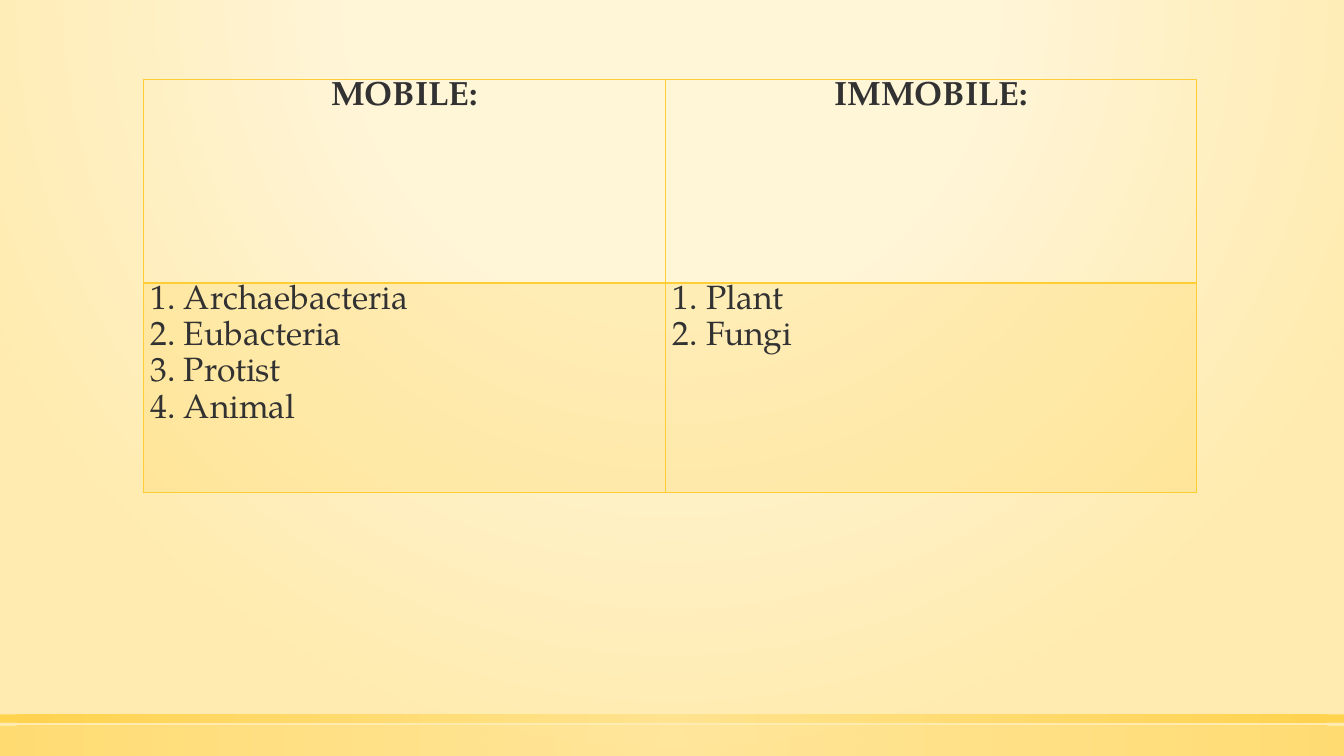
from pptx import Presentation
from pptx.dml.color import RGBColor
from pptx.enum.shapes import MSO_SHAPE
from pptx.enum.text import PP_ALIGN
from pptx.oxml import parse_xml
from pptx.oxml.ns import nsdecls, qn
from pptx.util import Cm, Pt

GOLD, PALE_GOLD, INK = "FFCD36", "FFE186", "323232"
FONT = "TeX Gyre Pagella"
WIDTH, HEIGHT = 33.87, 19.05
COLUMN_WIDTHS = (13.16, 13.39)
ROW_HEIGHTS = (5.13, 5.28)
MARGINS = {"margin_left": Cm(0.18), "margin_right": Cm(0.18),
           "margin_top": 0, "margin_bottom": 0}

KINGDOMS = {
    "MOBILE:": ["1. Archaebacteria", "2. Eubacteria", "3. Protist", "4. Animal"],
    "IMMOBILE:": ["1. Plant", "2. Fungi"],
}


def rgb(value):
    return RGBColor.from_string(value)


def set_attrs(obj, values):
    for name, value in values.items():
        setattr(obj, name, value)


def radial_fill(fill, element, stops, focus, alpha=100):
    """Fill with a circular gradient; focus is left, top, right, bottom in %."""
    fill.gradient()
    grad = element.find(".//" + qn("a:gradFill"))
    colors = "".join(
        f'<a:gs pos="{pos * 1000}"><a:srgbClr val="{color}">'
        f'<a:alpha val="{alpha * 1000}"/></a:srgbClr></a:gs>'
        for pos, color in stops)
    rect = " ".join(f'{side}="{v * 1000}"' for side, v in zip("ltrb", focus))
    grad.getparent().replace(grad, parse_xml(
        f'<a:gradFill {nsdecls("a")} rotWithShape="1"><a:gsLst>{colors}</a:gsLst>'
        f'<a:path path="circle"><a:fillToRect {rect}/></a:path></a:gradFill>'))


def add_band(s, top, height, alpha):
    sp = s.shapes.add_shape(MSO_SHAPE.RECTANGLE, 0, Cm(top), Cm(WIDTH), Cm(height))
    sp.shadow.inherit = False
    sp.line.fill.background()
    radial_fill(sp.fill, sp._element, [(0, PALE_GOLD), (100, GOLD)],
                (50, 50, 50, 50), alpha)


def set_borders(cell, bottom):
    tcPr = cell._tc.get_or_add_tcPr()
    for i, (side, width) in enumerate(zip("LRTB", (1, 1, 1, bottom))):
        tcPr.insert(i, parse_xml(
            f'<a:ln{side} {nsdecls("a")} w="{Pt(width)}"><a:solidFill>'
            f'<a:srgbClr val="{GOLD}"/></a:solidFill></a:ln{side}>'))


def write_cell(cell, lines, align, bold):
    set_attrs(cell, MARGINS)
    tf = cell.text_frame
    for i, line in enumerate(lines):
        p = tf.add_paragraph() if i else tf.paragraphs[0]
        set_attrs(p, {"alignment": align, "line_spacing": 1.07})
        r = p.add_run()
        r.text = line
        set_attrs(r.font, {"name": FONT, "size": Pt(24), "bold": bold})
        r.font.color.rgb = rgb(INK)


def tint_cell(cell, color, alpha):
    cell.fill.solid()
    cell.fill.fore_color.rgb = rgb(color)
    clr = cell._tc.tcPr.find(".//" + qn("a:srgbClr"))
    clr.append(parse_xml(f'<a:alpha {nsdecls("a")} val="{alpha * 1000}"/>'))


def add_kingdom_table(s, left, top):
    table = s.shapes.add_table(2, len(KINGDOMS), Cm(left), Cm(top),
                               Cm(sum(COLUMN_WIDTHS)), Cm(sum(ROW_HEIGHTS))).table
    set_attrs(table, {"first_row": False, "horz_banding": False})
    for column, width in zip(table.columns, COLUMN_WIDTHS):
        column.width = Cm(width)
    for row, height in zip(table.rows, ROW_HEIGHTS):
        row.height = Cm(height)
    for i, (heading, members) in enumerate(KINGDOMS.items()):
        head, body = table.cell(0, i), table.cell(1, i)
        write_cell(head, [heading], PP_ALIGN.CENTER, True)
        head.fill.background()
        set_borders(head, 2)
        write_cell(body, members, PP_ALIGN.LEFT, False)
        tint_cell(body, GOLD, 20)
        set_borders(body, 1)


def main():
    prs = Presentation()
    set_attrs(prs, {"slide_width": Cm(WIDTH), "slide_height": Cm(HEIGHT)})
    s = prs.slides.add_slide(prs.slide_layouts[6])

    # Background glow, centred above the slide
    radial_fill(s.background.fill, s._element,
                [(0, "FFF5D7"), (40, "FFF5D7"), (100, "FFEBAF")],
                (50, -80, 50, 180))

    # Bands along the bottom edge
    add_band(s, 18.29, 0.76, 50)
    add_band(s, 18, 0.21, 80)

    # Kingdoms by mobility
    add_kingdom_table(s, 3.61, 2)

    prs.save("out.pptx")


if __name__ == "__main__":
    main()
